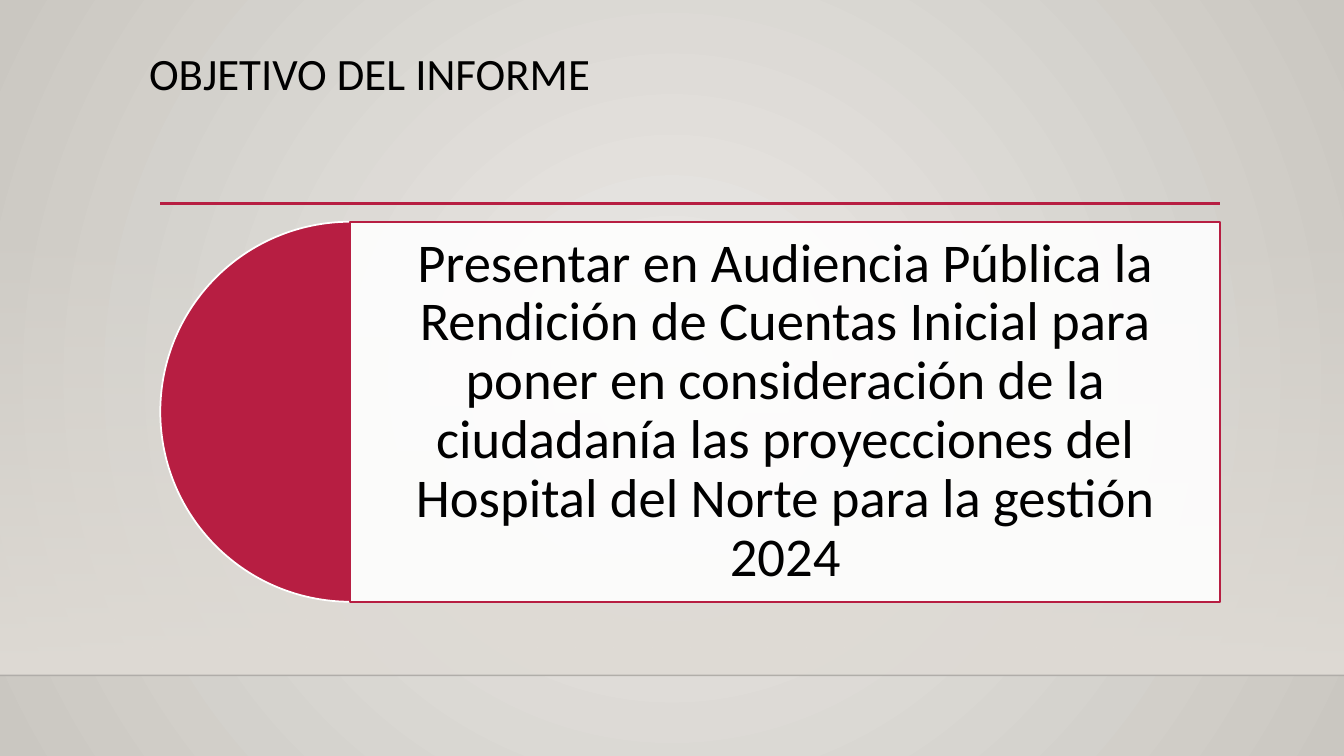
from lxml import etree
from pptx import Presentation
from pptx import util as u
from pptx.dml.color import RGBColor
from pptx.enum import shapes, text
from pptx.oxml.ns import qn

CRIMSON = RGBColor(0xB7, 0x1E, 0x42)
WHITE = RGBColor(0xFF, 0xFF, 0xFF)
BLACK = RGBColor(0x00, 0x00, 0x00)
SHADE = RGBColor(0x00, 0x00, 0x01)
SAND = RGBColor(0xDF, 0xDB, 0xD5)
LIGHT_STONE = RGBColor(0xEC, 0xEA, 0xE7)
DARK_STONE = RGBColor(0xCA, 0xC7, 0xC1)

WIDTH, HEIGHT = 13.33, 7.5
FLOOR_TOP = 6.7
LEFT, RIGHT = 1.59, 12.1
CARD_TOP, CARD_SIZE = 2.2, 3.77


def set_opacity(element, percent):
    """Make the first plain colour inside an element translucent."""
    color = next(element.iter(qn("a:srgbClr")))
    etree.SubElement(color, qn("a:alpha")).set("val", str(percent * 1000))


class SlideBuilder:
    font = "Calibri"
    line_spacing = 0.9

    def __init__(self, deck):
        self.slide = deck.slides.add_slide(deck.slide_layouts[6])

    def gradient(self, fill, first, last):
        fill.gradient()
        for stop, color in zip(fill.gradient_stops, (first, last)):
            stop.color.rgb = color

    def background(self, center, edge):
        self.gradient(self.slide.background.fill, center, edge)
        linear = next(self.slide.element.iter(qn("a:lin")))
        radial = etree.Element(qn("a:path"))
        radial.set("path", "circle")
        focus = etree.SubElement(radial, qn("a:fillToRect"))
        for side in "ltrb":
            focus.set(side, "50000")
        linear.getparent().replace(linear, radial)

    def shape(self, kind, left, top, width, height, fill=None, line=None):
        shape = self.slide.shapes.add_shape(
            kind, *map(u.Inches, (left, top, width, height)))
        shape.shadow.inherit = False
        if fill is not None:
            shape.fill.solid()
            shape.fill.fore_color.rgb = fill
        if line is None:
            shape.line.fill.background()
        else:
            shape.line.color.rgb = line
            shape.line.width = u.Pt(1.25)
        return shape

    def rule(self, left, right, top, color, weight):
        rule = self.slide.shapes.add_connector(
            shapes.MSO_CONNECTOR.STRAIGHT,
            *map(u.Inches, (left, top, right, top)))
        rule.line.color.rgb = color
        rule.line.width = u.Pt(weight)
        etree.SubElement(rule.element.spPr, qn("a:effectLst"))
        return rule

    def text_box(self, left, top, width, height):
        return self.slide.shapes.add_textbox(
            *map(u.Inches, (left, top, width, height)))

    def set_text(self, box, words, size, align, anchor, inset=None):
        frame = box.text_frame
        frame.word_wrap = True
        frame.vertical_anchor = anchor
        if inset is not None:
            frame.margin_left = frame.margin_right = u.Inches(inset)
            frame.margin_top = frame.margin_bottom = u.Inches(inset)
        frame.text = words
        para = frame.paragraphs[0]
        para.alignment = align
        para.line_spacing = self.line_spacing
        span = para.runs[0]
        span.font.name = self.font
        span.font.size = u.Pt(size)
        span.font.color.rgb = BLACK


def main():
    deck = Presentation()
    deck.slide_width, deck.slide_height = u.Inches(WIDTH), u.Inches(HEIGHT)
    page = SlideBuilder(deck)
    kinds = shapes.MSO_SHAPE

    # Backdrop: wall fading in towards the floor line
    page.background(LIGHT_STONE, DARK_STONE)
    wall = page.shape(kinds.RECTANGLE, 0, 2.21, WIDTH, FLOOR_TOP - 2.21)
    page.gradient(wall.fill, SAND, SAND)
    wall.fill.gradient_angle = 270
    set_opacity(wall.element.spPr, 0)
    floor_line = page.rule(0, WIDTH, FLOOR_TOP, SHADE, 1)
    set_opacity(floor_line.element.spPr, 20)

    # Title
    page.rule(LEFT, RIGHT, 2.02, CRIMSON, 2.5)
    title = page.text_box(1.38, 0.46, 9.4, 1.44)
    page.set_text(title, "OBJETIVO DEL INFORME", 32,
                  text.PP_ALIGN.LEFT, text.MSO_ANCHOR.TOP)

    # Half disc and objective card, which starts at the disc's centre
    disc = page.shape(kinds.PIE, LEFT, CARD_TOP, CARD_SIZE, CARD_SIZE,
                      CRIMSON, WHITE)
    disc.adjustments[0], disc.adjustments[1] = 54, 162
    card_left = LEFT + CARD_SIZE / 2
    card = page.shape(kinds.RECTANGLE, card_left, CARD_TOP,
                      RIGHT - card_left, CARD_SIZE, WHITE, CRIMSON)
    set_opacity(card.element.spPr, 90)
    page.set_text(card,
                  "Presentar en Audiencia Pública la Rendición de Cuentas "
                  "Inicial para poner en consideración de la ciudadanía las "
                  "proyecciones del Hospital del Norte para la gestión 2024",
                  39, text.PP_ALIGN.CENTER, text.MSO_ANCHOR.MIDDLE, 0.16)

    deck.save("out.pptx")


if __name__ == "__main__":
    main()
